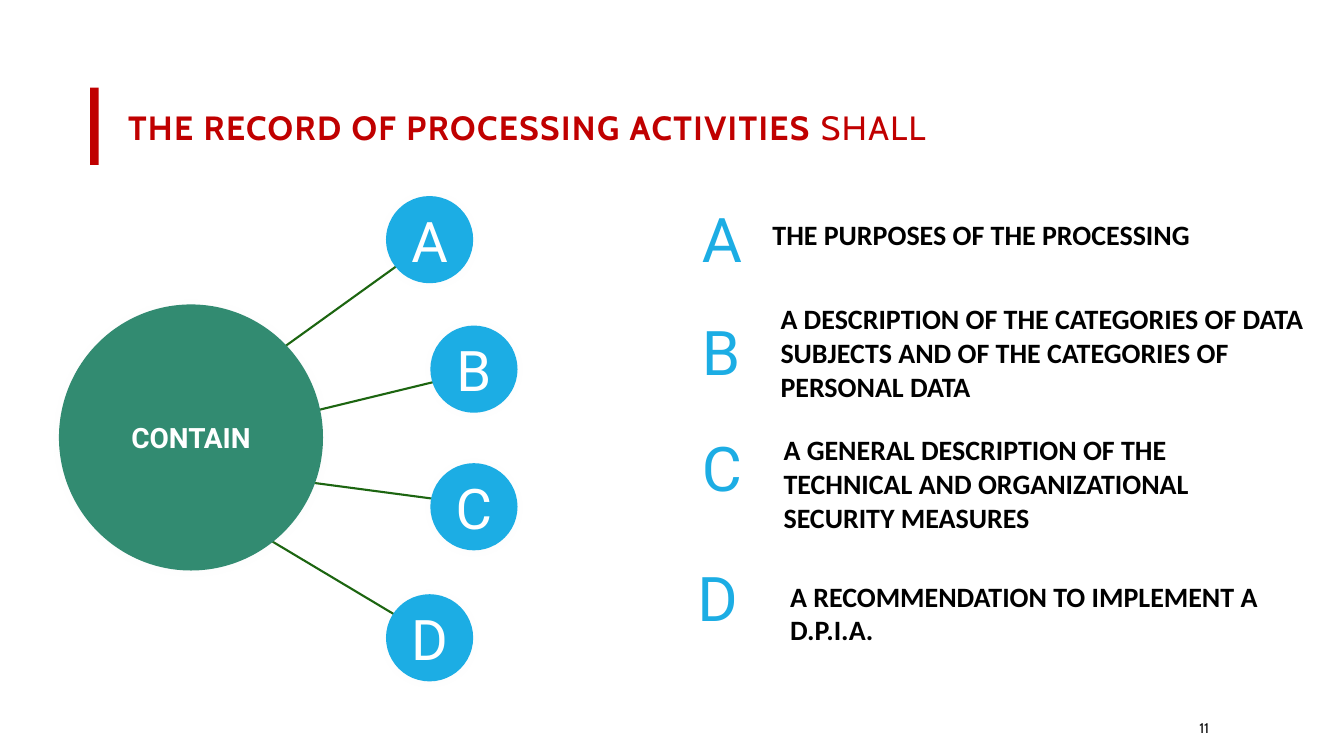
from collections import namedtuple
from dataclasses import dataclass

from lxml.etree import SubElement
from pptx import Presentation
from pptx.dml.color import RGBColor
from pptx.enum.shapes import MSO_CONNECTOR, MSO_SHAPE
from pptx.enum.text import MSO_ANCHOR, MSO_AUTO_SIZE, PP_ALIGN
from pptx.oxml.ns import qn
from pptx.util import Pt

PX = 9144
Box = namedtuple("Box", "left top width height")
Style = namedtuple("Style", "size font color bold")


@dataclass(frozen=True)
class Theme:
    """Colours and text styles of the slide."""
    accent: str = "C00000"
    hub: str = "328B71"
    node: str = "1CADE4"
    spoke: str = "1C6510"
    shadow: str = "DFE3E5"
    title: Style = Style(48, "Cabin", "C00000", True)
    title_light: Style = Style(48, "Cabin", "C00000", False)
    hub_text: Style = Style(40, "Roboto", "FFFFFF", True)
    node_text: Style = Style(80, "Roboto", "FFFFFF", False)
    letter: Style = Style(88, "Roboto", "1CADE4", False)
    clause: Style = Style(40, "Calibri", "000000", True)
    number: Style = Style(20, "Cabin", "0D0D0D", False)


THEME = Theme()
NODES = [("A", 649, 0), ("B", 737, 257), ("C", 737, 530), ("D", 649, 790)]
CLAUSES = [
    ("A", Box(9, 0, 158, 158), "THE PURPOSES OF THE PROCESSING", Box(149, 33, 1079, 77)),
    ("B", Box(9, 225, 158, 158),
     "A DESCRIPTION OF THE CATEGORIES OF DATA SUBJECTS AND OF THE CATEGORIES OF PERSONAL DATA",
     Box(165, 201, 1097, 212)),
    ("C", Box(9, 454, 158, 158),
     "A GENERAL DESCRIPTION OF THE TECHNICAL AND ORGANIZATIONAL SECURITY MEASURES",
     Box(171, 461, 1042, 212)),
    ("D", Box(0, 678, 151, 225), "A RECOMMENDATION TO IMPLEMENT A D.P.I.A.",
     Box(184, 751, 1003, 145)),
]


def emu(box):
    """Turn a px box into EMU lengths."""
    return [length * PX for length in box]


def inside(area, part):
    """Place a part's box relative to its area."""
    return Box(area.left + part.left, area.top + part.top, part.width, part.height)


def add_run(paragraph, wording, style):
    """Append one styled run."""
    run = paragraph.add_run()
    run.text = wording
    run.font.size, run.font.name, run.font.bold = Pt(style.size), style.font, style.bold
    run.font.color.rgb = RGBColor.from_string(style.color)
    return run


def add_label(slide, box, wording, style, anchor=MSO_ANCHOR.TOP):
    """Add a wrapping text box."""
    frame = slide.shapes.add_textbox(*emu(box)).text_frame
    frame.word_wrap, frame.vertical_anchor = True, anchor
    add_run(frame.paragraphs[0], wording, style)


def add_solid(slide, preset, box, color):
    """Add a filled shape without outline or shadow."""
    solid = slide.shapes.add_shape(preset, *emu(box))
    solid.fill.solid()
    solid.fill.fore_color.rgb = RGBColor.from_string(color)
    solid.line.fill.background()
    solid.shadow.inherit = False
    return solid


def add_disc(slide, box, color, wording, style):
    """Add a labelled circle with a faint soft shadow."""
    disc = add_solid(slide, MSO_SHAPE.OVAL, box, color)
    effects = disc.element.spPr.find(qn("a:effectLst"))
    shadow = SubElement(effects, qn("a:outerShdw"), blurRad=str(Pt(9)), dist=str(Pt(1)),
                        dir="5400000", algn="t", rotWithShape="0")
    tint = SubElement(shadow, qn("a:srgbClr"), val=THEME.shadow)
    SubElement(tint, qn("a:alpha"), val="9000")
    frame = disc.text_frame
    frame.margin_left = frame.margin_right = frame.margin_top = frame.margin_bottom = 0
    frame.word_wrap, frame.vertical_anchor = True, MSO_ANCHOR.MIDDLE
    frame.paragraphs[0].alignment = PP_ALIGN.CENTER
    add_run(frame.paragraphs[0], wording, style)


def add_spoke(slide, start, end):
    """Add a straight line between two points."""
    spoke = slide.shapes.add_connector(MSO_CONNECTOR.STRAIGHT, *emu(start + end))
    spoke.line.color.rgb = RGBColor.from_string(THEME.spoke)
    spoke.line.width = Pt(3)
    SubElement(spoke.element.spPr, qn("a:effectLst"))


def build_heading(slide, area):
    """Place the accent bar and the title."""
    add_solid(slide, MSO_SHAPE.RECTANGLE, inside(area, Box(0, 79, 17, 153)), THEME.accent)
    title = slide.shapes.title
    title.left, title.top, title.width, title.height = emu(inside(area, Box(65, 0, 2422, 328)))
    frame = title.text_frame
    frame.auto_size, frame.vertical_anchor = MSO_AUTO_SIZE.NONE, MSO_ANCHOR.MIDDLE
    heading = frame.paragraphs[0]
    heading.alignment, heading.line_spacing = PP_ALIGN.LEFT, 0.8
    for wording, style in (("THE RECORD OF PROCESSING ACTIVITIES ", THEME.title),
                           ("SHALL", THEME.title_light)):
        add_run(heading, wording, style).font._element.set("spc", "200")


def build_hub(slide, area):
    """Place the hub, its spokes and the lettered nodes."""
    for index, (_, left, top) in enumerate(NODES):
        start_y, reach = (513, 93) if index < 2 else (522, 81)
        add_spoke(slide, (area.left + 150, area.top + start_y),
                  (area.left + left + 85, area.top + top + reach))
    add_disc(slide, inside(area, Box(0, 215, 524, 528)), THEME.hub, "CONTAIN", THEME.hub_text)
    for letter, left, top in NODES:
        add_disc(slide, inside(area, Box(left, top, 173, 173)), THEME.node, letter,
                 THEME.node_text)


def build_clauses(slide, area):
    """Place each letter beside its clause."""
    for letter, letter_box, clause, clause_box in CLAUSES:
        add_label(slide, inside(area, letter_box), letter, THEME.letter, MSO_ANCHOR.MIDDLE)
        add_label(slide, inside(area, clause_box), clause, THEME.clause)


def main():
    """Build and save the slide."""
    deck = Presentation()
    deck.slide_width, deck.slide_height = 2667 * PX, 1500 * PX
    slide = deck.slides.add_slide(deck.slide_layouts[5])
    build_heading(slide, Box(179, 95, 2487, 328))
    build_hub(slide, Box(117, 389, 910, 963))
    build_clauses(slide, Box(1374, 393, 1262, 903))
    add_label(slide, Box(2370, 1415, 213, 60), "11", THEME.number, MSO_ANCHOR.MIDDLE)
    deck.save("out.pptx")


if __name__ == "__main__":
    main()
